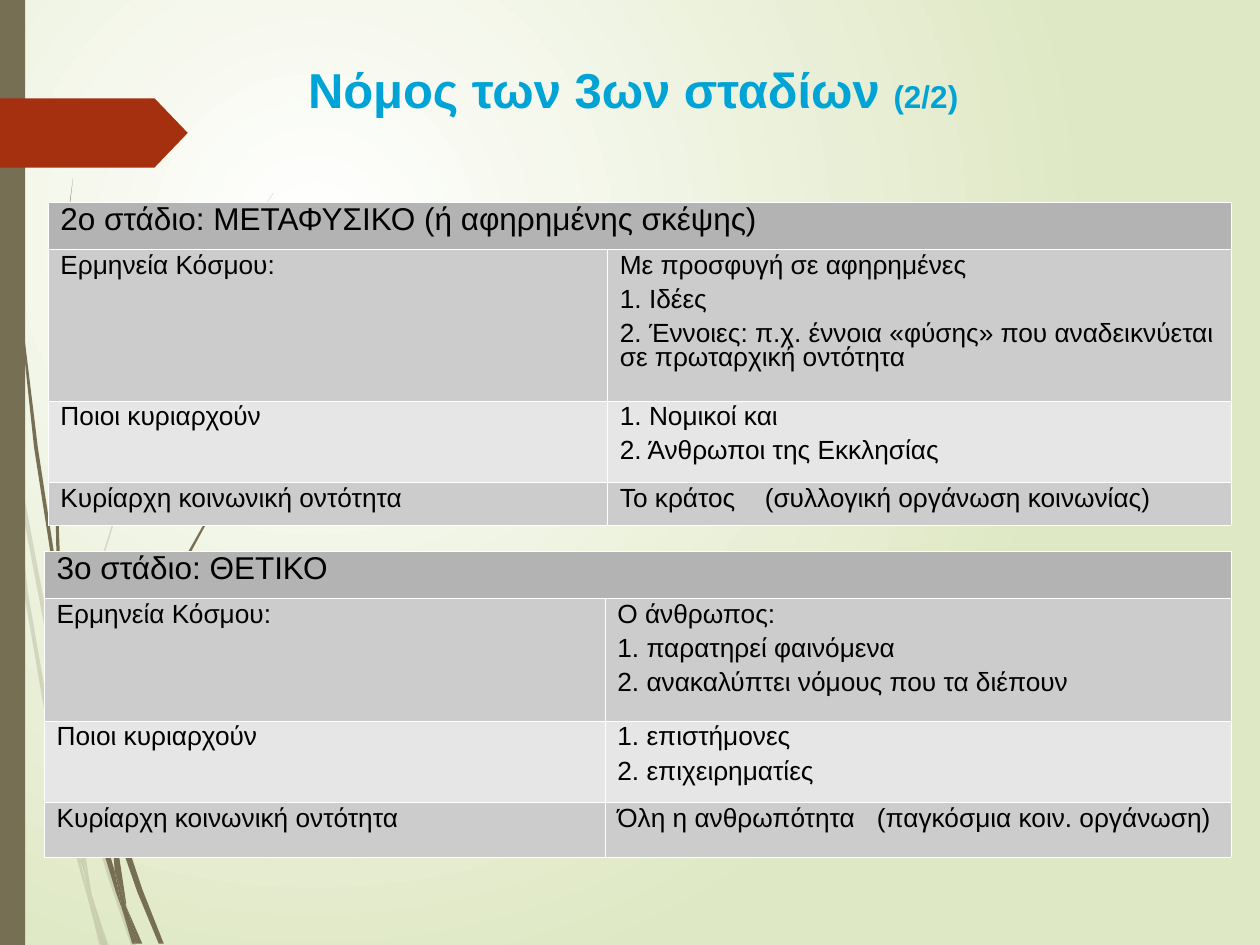
from lxml.etree import SubElement
from pptx import Presentation
from pptx.dml.color import RGBColor
from pptx.enum.shapes import MSO_SHAPE
from pptx.enum.text import MSO_ANCHOR, PP_ALIGN
from pptx.oxml.ns import qn
from pptx.util import Inches, Pt

BROWN = RGBColor(0x76, 0x6F, 0x54)
RED = RGBColor(0xA5, 0x30, 0x10)
BLUE = RGBColor(0x00, 0xA3, 0xD6)
WHITE = RGBColor(0xFF, 0xFF, 0xFF)
BLACK = RGBColor(0, 0, 0)
PALE = RGBColor(0xDF, 0xE8, 0xC4)
HEAD = RGBColor(0xB3, 0xB3, 0xB3)
DARK = RGBColor(0xCC, 0xCC, 0xCC)
LIGHT = RGBColor(0xE6, 0xE6, 0xE6)

FAINT = [
    [(0.4, 5.22), (0.59, 5.99), (0.59, 5.86), (0.43, 5.2), (0.1, 3.45), (0.12, 3.76)],
    [(0.64, 6.07), (0.61, 5.96), (0.61, 6.1), (0.85, 6.94), (1.04, 7.5), (1.08, 7.5),
     (0.88, 6.92)],
    [(0.83, 7.5), (0.86, 7.5), (0.73, 7.11)],
    [(0.64, 6.83), (0.48, 6.19), (0.22, 4.69), (0.12, 3.76), (0.08, 3.5), (0.19, 4.7),
     (0.45, 6.21), (0.64, 6.93), (0.7, 7.14), (0.69, 7.07)],
    [(0.58, 5.99), (0.6, 6.46), (0.64, 6.83), (0.67, 6.92), (0.73, 7.11), (0.72, 7.06),
     (0.63, 6.46), (0.61, 6.1), (0.61, 6.08)],
    [(0.61, 5.84), (0.76, 4.62), (1.11, 3.49), (1.59, 2.45), (1.87, 1.98), (2.01, 1.75),
     (2.17, 1.54), (2.17, 1.53), (2.01, 1.75), (1.86, 1.97), (1.58, 2.44), (1.1, 3.48),
     (0.75, 4.61), (0.59, 5.84), (0.59, 5.86), (0.61, 5.96)],
    [(0.7, 7.14), (0.79, 7.5), (0.82, 7.5)],
    [(0.67, 6.92), (0.65, 6.83), (0.69, 7.07), (0.7, 7.14), (0.82, 7.5), (0.83, 7.5),
     (0.73, 7.11)],
]
SOLID = [
    [(0.05, 1.1), (0.14, 2.33), (0.27, 3.55), (0.46, 4.77), (0.47, 4.81), (0.45, 4.57),
     (0.45, 4.53), (0.3, 3.55), (0.15, 2.32), (0.06, 1.09), (0.04, 0.48), (0.03, 0),
     (0.02, 0), (0.03, 0.48)],
    [(0.73, 5.92), (0.88, 6.45), (0.88, 6.33), (0.88, 6.31), (0.77, 5.9), (0.5, 4.72),
     (0.53, 5.05)],
    [(0.94, 6.49), (0.91, 6.41), (0.91, 6.56), (1.09, 7.08), (1.26, 7.49), (1.3, 7.49),
     (1.13, 7.06)],
    [(0.91, 6.91), (0.81, 6.57), (0.6, 5.56), (0.53, 5.05), (0.47, 4.77), (0.56, 5.57),
     (0.77, 6.59), (0.92, 7.08), (0.97, 7.22), (0.96, 7.17)],
    [(0.5, 4.72), (0.48, 4.53), (0.44, 3.49), (0.48, 2.45), (0.52, 1.93), (0.58, 1.41),
     (0.51, 1.93), (0.47, 2.45), (0.43, 3.49), (0.45, 4.49), (0.49, 4.72)],
    [(1.1, 7.49), (1.13, 7.49), (1, 7.19)],
    [(0.91, 6.33), (1.03, 5.52), (1.31, 4.76), (1.69, 4.06), (1.91, 3.74), (2.03, 3.59),
     (2.16, 3.44), (2.15, 3.44), (2.03, 3.58), (1.91, 3.73), (1.68, 4.05), (1.29, 4.74),
     (1.01, 5.51), (0.88, 6.31), (0.91, 6.41)],
    [(0.97, 7.22), (1.05, 7.49), (1.08, 7.49)],
    [(0.88, 6.45), (0.91, 6.91), (0.96, 7.06), (1, 7.19), (1, 7.16), (0.91, 6.56),
     (0.9, 6.51)],
    [(0.96, 7.06), (0.91, 6.91), (0.96, 7.17), (0.97, 7.22), (1.08, 7.49), (1.1, 7.49),
     (1, 7.19)],
]
LABELS = ["Ερμηνεία Κόσμου:", "Ποιοι κυριαρχούν", "Κυρίαρχη κοινωνική οντότητα"]
STAGES = [
    dict(title="2ο στάδιο: ΜΕΤΑΦΥΣΙΚΟ (ή αφηρημένης σκέψης)", at=(0.38, 1.6),
         cols=(4.44, 4.95), rows=(0.38, 1.2, 0.65, 0.34), tab=1.15, body=[
             ["Με προσφυγή σε αφηρημένες", "1. Ιδέες",
              "2. Έννοιες: π.χ. έννοια «φύσης» που αναδεικνύεται σε πρωταρχική οντότητα"],
             ["1. Νομικοί και", "2. Άνθρωποι της Εκκλησίας"],
             ["Το κράτος\t(συλλογική οργάνωση κοινωνίας)"]]),
    dict(title="3ο στάδιο: ΘΕΤΙΚΟ", at=(0.35, 4.37),
         cols=(4.45, 4.97), rows=(0.38, 0.97, 0.65, 0.43), tab=2.06, body=[
             ["Ο άνθρωπος:", "1. παρατηρεί φαινόμενα",
              "2. ανακαλύπτει νόμους που τα διέπουν"],
             ["1. επιστήμονες", "2. επιχειρηματίες"],
             ["Όλη η ανθρωπότητα\t(παγκόσμια κοιν. οργάνωση)"]]),
]


def paint(shape, color):
    shape.shadow.inherit = False
    shape.fill.solid()
    shape.fill.fore_color.rgb = color
    shape.line.fill.background()


def add_run(para, text, color, size, bold=False):
    run = para.add_run()
    run.text = text
    for key, value in dict(name="Arial", size=Pt(size), bold=bold).items():
        setattr(run.font, key, value)
    run.font.color.rgb = color


def set_back(slide):
    fill = slide.background.fill
    fill.gradient()
    for stop, color in zip(fill.gradient_stops, (WHITE, PALE)):
        stop.color.rgb = color
    line = next(slide.element.iter(qn("a:lin")))
    grad = line.getparent()
    grad.remove(line)
    ring = SubElement(grad, qn("a:path"), path="circle")
    SubElement(ring, qn("a:fillToRect"), l="50000", t="50000", r="100000", b="100000")


def add_leaves(slide, leaves, alpha=None):
    group = slide.shapes.add_group_shape()
    for points in leaves:
        first, *rest = [(Inches(x), Inches(y)) for x, y in points]
        form = group.shapes.build_freeform(*first)
        form.add_line_segments(rest)
        leaf = form.convert_to_shape()
        paint(leaf, BROWN)
        if alpha:
            tint = next(leaf.element.spPr.iter(qn("a:srgbClr")))
            SubElement(tint, qn("a:alpha"), val=str(alpha * 1000))


def add_block(slide, kind, box, color):
    shape = slide.shapes.add_shape(kind, *map(Inches, box))
    paint(shape, color)
    return shape


def add_title(slide):
    box = slide.shapes.add_textbox(*map(Inches, (0.3, 0.37, 9.45, 0.62)))
    frame = box.text_frame
    for key, value in dict(word_wrap=True, vertical_anchor=MSO_ANCHOR.BOTTOM).items():
        setattr(frame, key, value)
    para = frame.paragraphs[0]
    para.alignment = PP_ALIGN.CENTER
    add_run(para, "Νόμος των 3ων σταδίων ", BLUE, 28, True)
    add_run(para, "(2/2)", BLUE, 18, True)


def fill_cell(cell, lines, color, size, tab):
    props = cell._tc.get_or_add_tcPr()
    for side in ("lnL", "lnR", "lnT", "lnB"):
        edge = SubElement(props, qn("a:" + side), w=str(Pt(0.06)))
        SubElement(SubElement(edge, qn("a:solidFill")), qn("a:srgbClr"), val=str(WHITE))
    cell.fill.solid()
    cell.fill.fore_color.rgb = color
    frame = cell.text_frame
    for i, text in enumerate(lines):
        para = frame.add_paragraph() if i else frame.paragraphs[0]
        para.line_spacing = 0.81
        para.space_before = Pt(6 if i else 0)
        if "\t" in text:
            stops = SubElement(para._p.get_or_add_pPr(), qn("a:tabLst"))
            SubElement(stops, qn("a:tab"), pos=str(Inches(tab)), algn="l")
        add_run(para, text, BLACK, size)


def add_stage(slide, title, at, cols, rows, tab, body):
    size = sum(cols), sum(rows)
    table = slide.shapes.add_table(4, 2, *map(Inches, at + size)).table
    table.first_row = table.horz_banding = False
    for col, width in zip(table.columns, cols):
        col.width = Inches(width)
    for row, height in zip(table.rows, rows):
        row.height = Inches(height)
    table.cell(0, 0).merge(table.cell(0, 1))
    fill_cell(table.cell(0, 0), [title], HEAD, 18, tab)
    for i, (label, lines) in enumerate(zip(LABELS, body), 1):
        color = DARK if i % 2 else LIGHT
        fill_cell(table.cell(i, 0), [label], color, 15, tab)
        fill_cell(table.cell(i, 1), lines, color, 15, tab)


def main():
    deck = Presentation()
    deck.slide_width, deck.slide_height = Inches(10), Inches(7.5)
    slide = deck.slides.add_slide(deck.slide_layouts[6])
    set_back(slide)
    add_leaves(slide, FAINT, 20)
    add_leaves(slide, SOLID)
    add_block(slide, MSO_SHAPE.RECTANGLE, (0, 0, 0.2, 7.5), BROWN)
    arrow = add_block(slide, MSO_SHAPE.PENTAGON, (0, 0.78, 1.49, 0.55), RED)
    arrow.adjustments[0] = 0.48
    add_title(slide)
    for stage in STAGES:
        add_stage(slide, **stage)
    deck.save("out.pptx")


if __name__ == "__main__":
    main()
